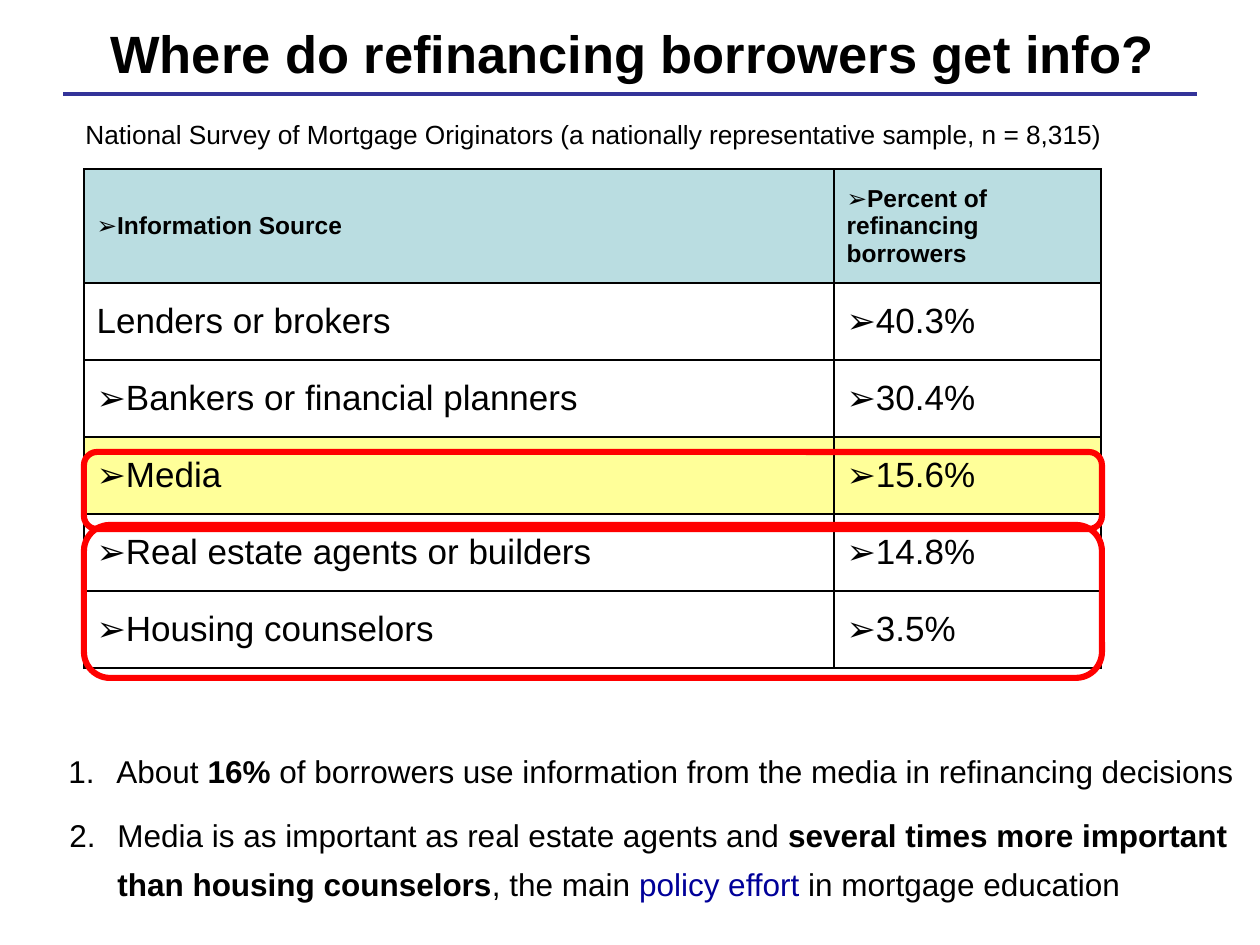
"""Build the slide on where refinancing borrowers get information."""
from lxml import etree
from pptx import Presentation, util as u
from pptx.dml.color import RGBColor
from pptx.enum import shapes, text
from pptx.oxml.ns import qn

PX = 914400 / 126
FONT = "Arial"
COLORS = {"black": "000000", "rule": "333399", "head": "BADDE1",
          "media": "FFFF99", "box": "FF0000", "policy": "000099"}
HEADER = ("Information Source", "Percent of \vrefinancing borrowers")
SOURCES = [("Lenders or brokers", "40.3%"),
           ("Bankers or financial planners", "30.4%"),
           ("Media", "15.6%"),
           ("Real estate agents or builders", "14.8%"),
           ("Housing counselors", "3.5%")]


def px(n):
    return u.Emu(round(n * PX))


def rgb(name):
    return RGBColor.from_string(COLORS[name])


def sub(parent, tag, **attrs):
    return etree.SubElement(parent, qn(tag), {k: str(v) for k, v in attrs.items()})


def add_run(p, words, size, bold=False, color="black"):
    for i, part in enumerate(words.split("\v")):
        if i:
            p.add_line_break()
        r = p.add_run()
        r.text = part
        r.font.name, r.font.size, r.font.bold = FONT, u.Pt(size), bold
        r.font.color.rgb = rgb(color)


def add_text(s, box, runs, size, spacing=None, align=None, anchor=text.MSO_ANCHOR.TOP):
    tf = s.shapes.add_textbox(*map(px, box)).text_frame
    tf.word_wrap, tf.vertical_anchor = True, anchor
    p = tf.paragraphs[0]
    p.alignment = align
    if spacing:
        p.line_spacing = spacing
        sub(sub(p._p.get_or_add_pPr(), "a:spcBef"), "a:spcPct", val=20000)
    for words, *style in runs:
        add_run(p, words, size, *style)
    return p


def add_numbered(s, box, runs, number):
    pPr = add_text(s, box, runs, 18, 1.3)._p.get_or_add_pPr()
    pPr.set("marL", str(px(48)))
    pPr.set("indent", str(-px(48)))
    sub(pPr, "a:buFont", typeface=FONT)
    sub(pPr, "a:buAutoNum", type="arabicPeriod", startAt=number)


def fill_cell(cell, words, size, bold, fill, bullet):
    cell.vertical_anchor = text.MSO_ANCHOR.MIDDLE
    tcPr = cell._tc.get_or_add_tcPr()
    for side in "LRTB":
        ln = sub(tcPr, f"a:ln{side}", w=u.Pt(1))
        sub(sub(ln, "a:solidFill"), "a:srgbClr", val=COLORS["black"])
    if fill:
        cell.fill.solid()
        cell.fill.fore_color.rgb = rgb(fill)
    else:
        cell.fill.background()
    p = cell.text_frame.paragraphs[0]
    if bullet:
        pPr = p._p.get_or_add_pPr()
        sub(pPr, "a:buFont", typeface=FONT)
        sub(pPr, "a:buChar", char="➢")
    add_run(p, words, size, bold)


def add_sources(s):
    rows = [HEADER] + SOURCES
    table = s.shapes.add_table(len(rows), 2, *map(px, (84, 169, 1017, 499))).table
    table.first_row = table.horz_banding = False
    for col, width in zip(table.columns, (750, 267)):
        col.width = px(width)
    for i, row in enumerate(rows):
        table.rows[i].height = px(77 if i else 114)
        fill = "media" if row[0] == "Media" else None if i else "head"
        for j, words in enumerate(row):
            fill_cell(table.cell(i, j), words, 20 if i else 14, i == 0, fill,
                      (i, j) != (1, 0))


def add_highlight(s, top, height):
    sp = s.shapes.add_shape(shapes.MSO_SHAPE.ROUNDED_RECTANGLE,
                            *map(px, (84, top, 1018, height)))
    sp.shadow.inherit = False
    sp.adjustments[0] = 0.17
    sp.fill.background()
    sp.line.color.rgb, sp.line.width = rgb("box"), u.Pt(3.5)


def add_rule(s):
    sp = s.shapes.add_connector(shapes.MSO_CONNECTOR.STRAIGHT,
                                *map(px, (63, 94, 1197, 94)))
    sp.line.color.rgb, sp.line.width = rgb("rule"), u.Pt(2.5)
    sub(sp._element.spPr, "a:effectLst")


def main():
    prs = Presentation()
    prs.slide_width, prs.slide_height = px(1260), px(945)
    s = prs.slides.add_slide(prs.slide_layouts[6])
    add_text(s, (56, -2, 1153, 109), [("Where do refinancing borrowers get info?", True)],
             30, align=text.PP_ALIGN.CENTER, anchor=text.MSO_ANCHOR.MIDDLE)
    add_rule(s)
    add_numbered(s, (56, 735, 1192, 78), [
        ("About ",), ("16%", True),
        (" of borrowers use information from the media in refinancing decisions",)], 1)
    add_sources(s)
    add_text(s, (73, 118, 1061, 38), [
        ("National Survey of Mortgage Originators "
         "(a nationally representative sample, n = 8,315)",)], 15, 0.8)
    add_highlight(s, 452, 77)
    add_highlight(s, 525, 153)
    add_numbered(s, (57, 798, 1192, 107), [
        ("Media is as important as real estate agents and ",),
        ("several times more important than housing counselors", True),
        (", the main ",), ("policy effort", False, "policy"),
        (" in mortgage education",)], 2)
    prs.save("out.pptx")


if __name__ == "__main__":
    main()
